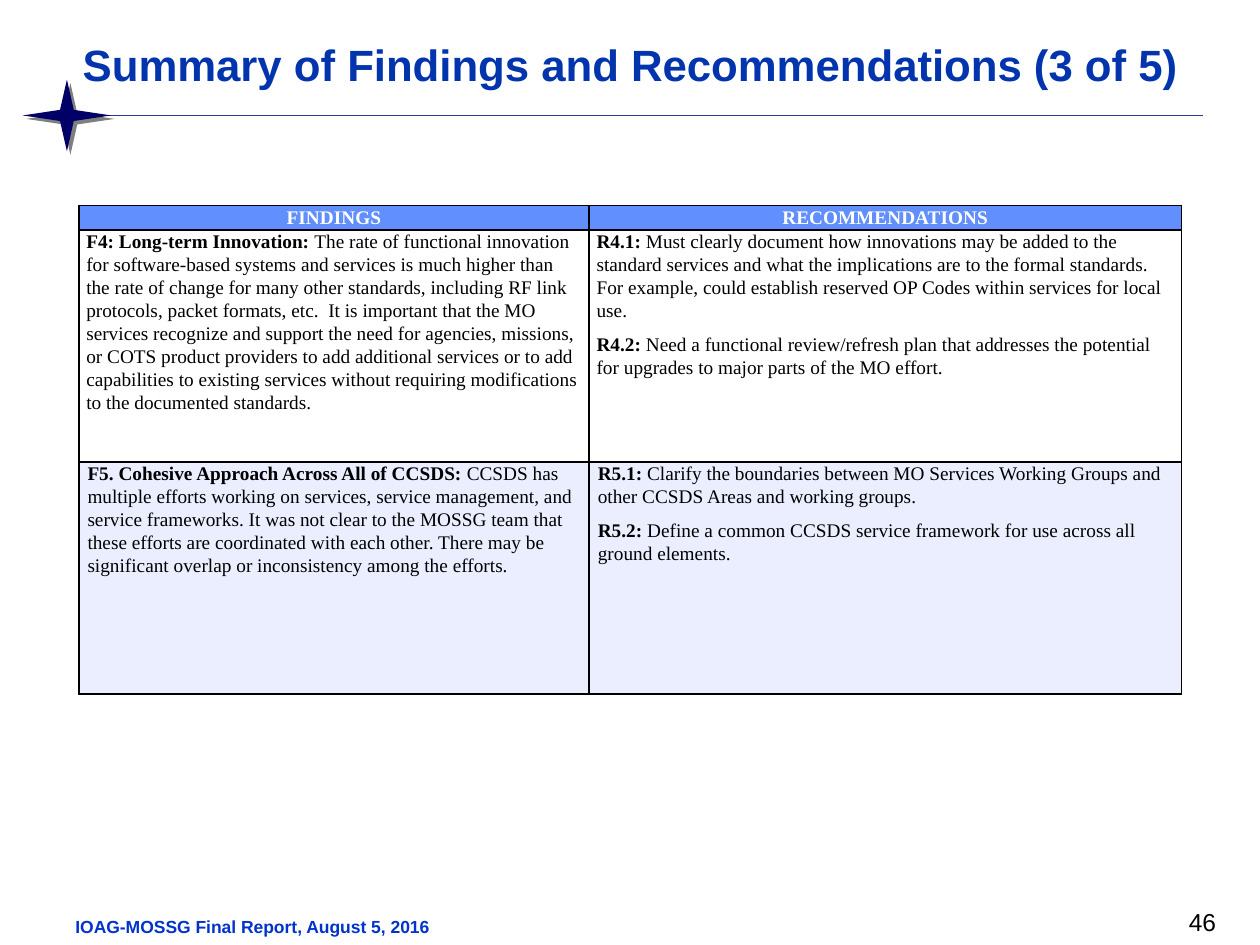
import pptx
import pptx.dml.color
import pptx.enum.shapes
import pptx.enum.text
import pptx.oxml
import pptx.oxml.ns
import pptx.util

Pt = pptx.util.Pt
Align = pptx.enum.text.PP_ALIGN
Shape = pptx.enum.shapes.MSO_SHAPE
Joint = pptx.enum.shapes.MSO_CONNECTOR
NS = pptx.oxml.ns.nsdecls("a")


def shade(code):
    return pptx.dml.color.RGBColor.from_string(code)


class Page:
    """Holds the style and the current slide, and draws each kind of element."""

    sans, serif = "Arial", "Times New Roman"
    blue, royal, navy = "0234AD", "0033CC", "000066"
    black, white, head, pale = "000000", "FFFFFF", "618FFD", "EAEEFF"

    def __init__(self, slide):
        self.slide = slide

    def words(self, para, text, font, size, tint, bold=False):
        run = para.add_run()
        run.text = text
        run.font.name, run.font.size, run.font.bold = font, Pt(size), bold
        run.font.color.rgb = shade(tint)

    def text(self, box, text, size, tint, bold=False, align=Align.LEFT, wrap=True, space=1.0):
        frame = self.slide.shapes.add_textbox(*map(Pt, box)).text_frame
        frame.word_wrap = wrap
        para = frame.paragraphs[0]
        para.alignment, para.line_spacing = align, space
        self.words(para, text, self.sans, size, tint, bold)

    def rule(self, left, right, top, tint, width):
        line = self.slide.shapes.add_connector(Joint.STRAIGHT, Pt(left), Pt(top), Pt(right), Pt(top))
        line.line.color.rgb = shade(tint)
        line.line.width = Pt(width)
        line._element.spPr.append(pptx.oxml.parse_xml(f"<a:effectLst {NS}/>"))

    def star(self, box, tint):
        star = self.slide.shapes.add_shape(Shape.STAR_4_POINT, *map(Pt, box))
        star.adjustments[0] = 0.11
        star.fill.solid()
        star.fill.fore_color.rgb = shade(tint)
        star.line.fill.background()
        star._element.spPr.append(pptx.oxml.parse_xml(
            f'<a:effectLst {NS}><a:outerShdw dist="{Pt(2.8)}" dir="2700000" algn="ctr" rotWithShape="0">'
            f'<a:srgbClr val="{self.black}"><a:alpha val="50000"/></a:srgbClr></a:outerShdw></a:effectLst>'))

    def edge(self, cell):
        props = cell._tc.get_or_add_tcPr()
        for spot, side in enumerate(("lnL", "lnR", "lnT", "lnB")):
            props.insert(spot, pptx.oxml.parse_xml(
                f'<a:{side} {NS} w="{Pt(1)}"><a:solidFill><a:srgbClr val="{self.black}"/>'
                f'</a:solidFill></a:{side}>'))

    def cell(self, cell, paras, fill, tint, align, inset):
        cell.fill.solid()
        cell.fill.fore_color.rgb = shade(fill)
        cell.margin_left = cell.margin_right = Pt(inset)
        cell.margin_top = cell.margin_bottom = 0
        frame = cell.text_frame
        for spot, (lead, body) in enumerate(paras):
            para = frame.add_paragraph() if spot else frame.paragraphs[0]
            para.alignment, para.line_spacing = align, 1.07
            para.space_after = Pt(6 if spot < len(paras) - 1 else 0)
            self.words(para, lead, self.serif, 11, tint, True)
            if body:
                self.words(para, body, self.serif, 11, tint)
        self.edge(cell)

    def table(self, left, top, cols, rows, data):
        box = map(Pt, (left, top, sum(cols), sum(rows)))
        grid = self.slide.shapes.add_table(len(rows), len(cols), *box).table
        for col, width in zip(grid.columns, cols):
            col.width = Pt(width)
        for row, high in zip(grid.rows, rows):
            row.height = Pt(high)
        looks = [
            (self.head, self.white, Align.CENTER, 4.3),
            (self.white, self.black, Align.LEFT, 4.3),
            (self.pale, self.black, Align.LEFT, 5),
        ]
        for row, line, look in zip(grid.rows, data, looks):
            for cell, paras in zip(row.cells, line):
                self.cell(cell, paras, *look)


DATA = [
    [[("FINDINGS", "")], [("RECOMMENDATIONS", "")]],
    [
        [("F4: Long-term Innovation: ",
          "The rate of functional innovation for software-based systems and services is much higher "
          "than the rate of change for many other standards, including RF link protocols, packet "
          "formats, etc.  It is important that the MO services recognize and support the need for "
          "agencies, missions, or COTS product providers to add additional services or to add "
          "capabilities to existing services without requiring modifications to the documented "
          "standards.")],
        [("R4.1:",
          " Must clearly document how innovations may be added to the standard services and what the "
          "implications are to the formal standards.  For example, could establish reserved OP Codes "
          "within services for local use."),
         ("R4.2: ",
          "Need a functional review/refresh plan that addresses the potential for upgrades to major "
          "parts of the MO effort.")],
    ],
    [
        [("F5. Cohesive Approach Across All of CCSDS: ",
          "CCSDS has multiple efforts working on services, service management, and service "
          "frameworks. It was not clear to the MOSSG team that these efforts are coordinated with "
          "each other. There may be significant overlap or inconsistency among the efforts.")],
        [("R5.1: ",
          "Clarify the boundaries between MO Services Working Groups and other CCSDS Areas and "
          "working groups."),
         ("R5.2: ",
          "Define a common CCSDS service framework for use across all ground elements.")],
    ],
]


def main():
    deck = pptx.Presentation()
    deck.slide_width, deck.slide_height = Pt(720), Pt(540)
    page = Page(deck.slides.add_slide(deck.slide_layouts[6]))
    page.rule(38, 687.5, 66, "333399", 0.13)
    page.star((13, 45.5, 50.5, 41), page.navy)
    page.text((36, 520, 219.5, 19.5), "IOAG-MOSSG Final Report, August 5, 2016",
              10, page.royal, bold=True, wrap=False)
    page.text((36, 21.6, 648, 44.6), "Summary of Findings and Recommendations (3 of 5)",
              25, page.blue, bold=True, align=Align.CENTER, space=0.9)
    page.text((534, 515, 168, 18), "46", 14, page.black, align=Align.RIGHT)
    page.table(45, 117.4, (291.6, 338.4), (12.4, 132.5, 132.5), DATA)
    deck.save("out.pptx")


if __name__ == "__main__":
    main()
